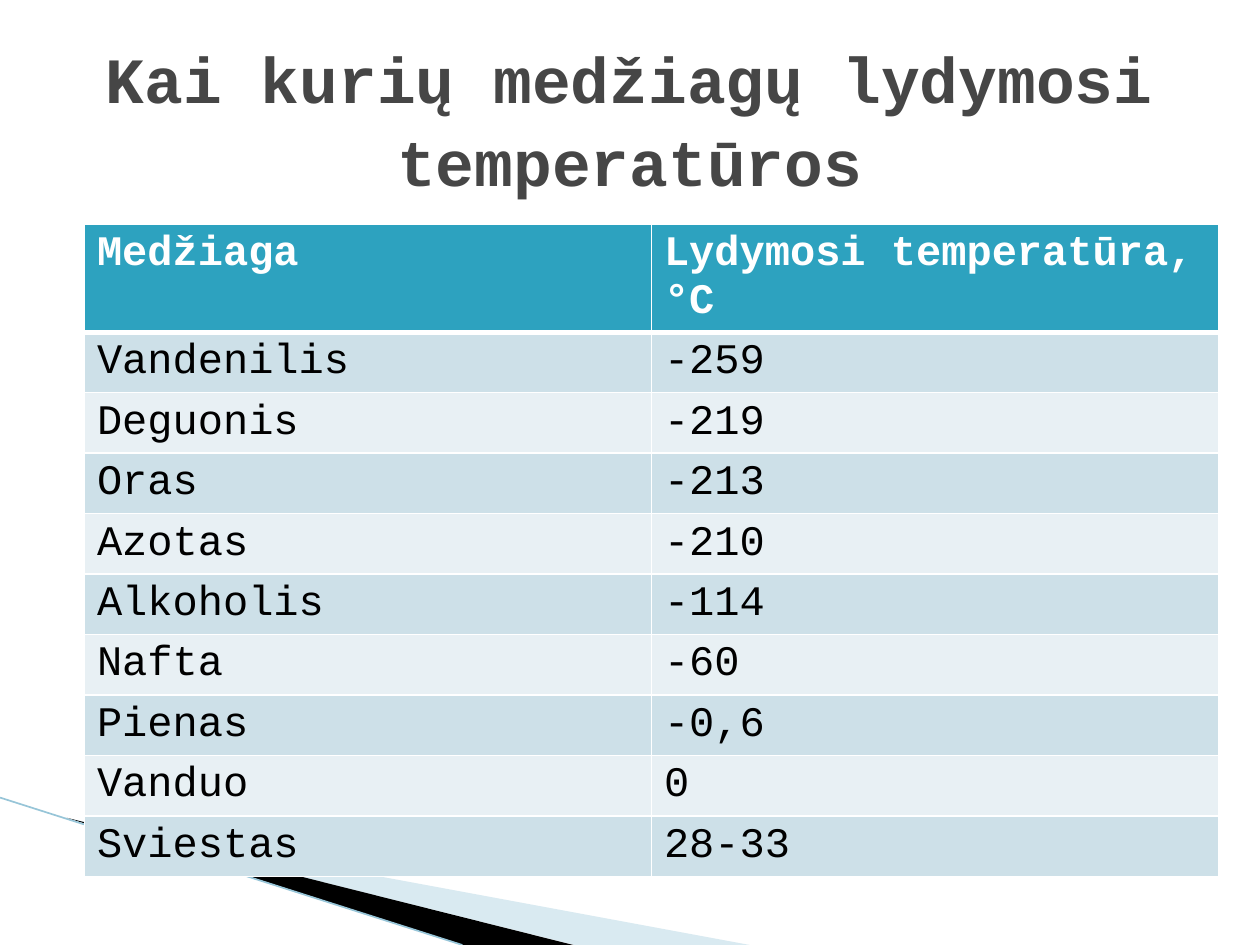
import dataclasses
import typing

import lxml.etree
import pptx
import pptx.dml.color
import pptx.enum.shapes
import pptx.enum.text
import pptx.oxml.ns
import pptx.util

Inches = pptx.util.Inches
Point = typing.Tuple[float, float]


@dataclasses.dataclass(frozen=True)
class Theme:
    font: str = "Courier New"
    title: str = "464646"
    head: str = "2DA2BF"
    bands: typing.Tuple[str, str] = ("CDE0E8", "E8F0F4")
    white: str = "FFFFFF"
    black: str = "000000"
    pale: str = "A0CBDC"
    edge: str = "97C5D8"
    big: float = 36.9
    small: float = 24


@dataclasses.dataclass(frozen=True)
class Wedge:
    points: typing.Tuple[Point, ...]
    color: str
    alpha: int = 100


@dataclasses.dataclass(frozen=True)
class Row:
    name: str
    temp: str


THEME = Theme()
WEDGES = (
    Wedge(((0.55, 6.5), (5.95, 7.5), (4.56, 7.5)), THEME.pale, 40),
    Wedge(((0.53, 6.49), (4.55, 7.5), (3.67, 7.5)), THEME.black),
)
ROWS = (
    Row("Medžiaga", "Lydymosi temperatūra, °C"),
    Row("Vandenilis", "-259"),
    Row("Deguonis", "-219"),
    Row("Oras", "-213"),
    Row("Azotas", "-210"),
    Row("Alkoholis", "-114"),
    Row("Nafta", "-60"),
    Row("Pienas", "-0,6"),
    Row("Vanduo", "0"),
    Row("Sviestas", "28-33"),
)


def rgb(color: str) -> pptx.dml.color.RGBColor:
    return pptx.dml.color.RGBColor.from_string(color)


def add_node(owner, tag: str, **values: str):
    node = lxml.etree.SubElement(owner, pptx.oxml.ns.qn(tag))
    for key, value in values.items():
        node.set(key, value)
    return node


def write(frame, text: str, size: float, color: str, bold: bool) -> None:
    run = frame.paragraphs[0].add_run()
    run.text = text
    style = {"name": THEME.font, "size": pptx.util.Pt(size), "bold": bold}
    for key, value in style.items():
        setattr(run.font, key, value)
    run.font.color.rgb = rgb(color)


def draw_wedge(slide, wedge: Wedge) -> None:
    dots = [(Inches(x), Inches(y)) for x, y in wedge.points]
    pen = slide.shapes.build_freeform(*dots[0])
    pen.add_line_segments(dots[1:], close=True)
    shape = pen.convert_to_shape()
    shape.shadow.inherit = False
    shape.fill.solid()
    shape.fill.fore_color.rgb = rgb(wedge.color)
    shape.line.fill.background()
    if wedge.alpha < 100:
        tint = next(shape.element.spPr.iter(pptx.oxml.ns.qn("a:srgbClr")))
        add_node(tint, "a:alpha", val=str(wedge.alpha * 1000))


def draw_edge(slide, start: Point, end: Point) -> None:
    edge = slide.shapes.add_connector(
        pptx.enum.shapes.MSO_CONNECTOR.STRAIGHT,
        *(Inches(value) for value in start + end),
    )
    edge.line.color.rgb = rgb(THEME.edge)
    edge.line.width = pptx.util.Pt(0.95)
    add_node(edge.element.spPr, "a:effectLst")


def add_rules(cell, row: int) -> None:
    props = cell._tc.get_or_add_tcPr()
    widths = {"L": 1, "R": 1, "T": 3 if row == 1 else 1, "B": 3 if row == 0 else 1}
    for side, width in widths.items():
        line = add_node(props, f"a:ln{side}", w=str(pptx.util.Pt(width)))
        fill = add_node(line, "a:solidFill")
        add_node(fill, "a:srgbClr", val=THEME.white)


def draw_table(slide, rows: typing.Sequence[Row]) -> None:
    table = slide.shapes.add_table(
        len(rows), 2, Inches(0.67), Inches(1.78), Inches(9), Inches(5.17)
    ).table
    for index, row in enumerate(rows):
        head = index == 0
        table.rows[index].height = Inches(0.85 if head else 0.48)
        for col, text in enumerate((row.name, row.temp)):
            cell = table.cell(index, col)
            add_rules(cell, index)
            cell.fill.solid()
            cell.fill.fore_color.rgb = rgb(
                THEME.head if head else THEME.bands[(index - 1) % 2]
            )
            color = THEME.white if head else THEME.black
            write(cell.text_frame, text, THEME.small, color, head)


def draw_title(slide, text: str) -> None:
    box = slide.shapes.add_textbox(Inches(0.5), Inches(0.3), Inches(9), Inches(1.25))
    frame = box.text_frame
    frame.word_wrap = True
    frame.vertical_anchor = pptx.enum.text.MSO_ANCHOR.MIDDLE
    form = {"alignment": pptx.enum.text.PP_ALIGN.CENTER, "line_spacing": 1.07}
    for key, value in form.items():
        setattr(frame.paragraphs[0], key, value)
    write(frame, text, THEME.big, THEME.title, True)


def main() -> None:
    deck = pptx.Presentation()
    deck.slide_width, deck.slide_height = Inches(10), Inches(7.5)
    slide = deck.slides.add_slide(deck.slide_layouts[6])
    for wedge in WEDGES:
        draw_wedge(slide, wedge)
    draw_edge(slide, (0, 6.33), (3.67, 7.5))
    draw_table(slide, ROWS)
    draw_title(slide, "Kai kurių medžiagų lydymosi temperatūros")
    deck.save("out.pptx")


if __name__ == "__main__":
    main()
